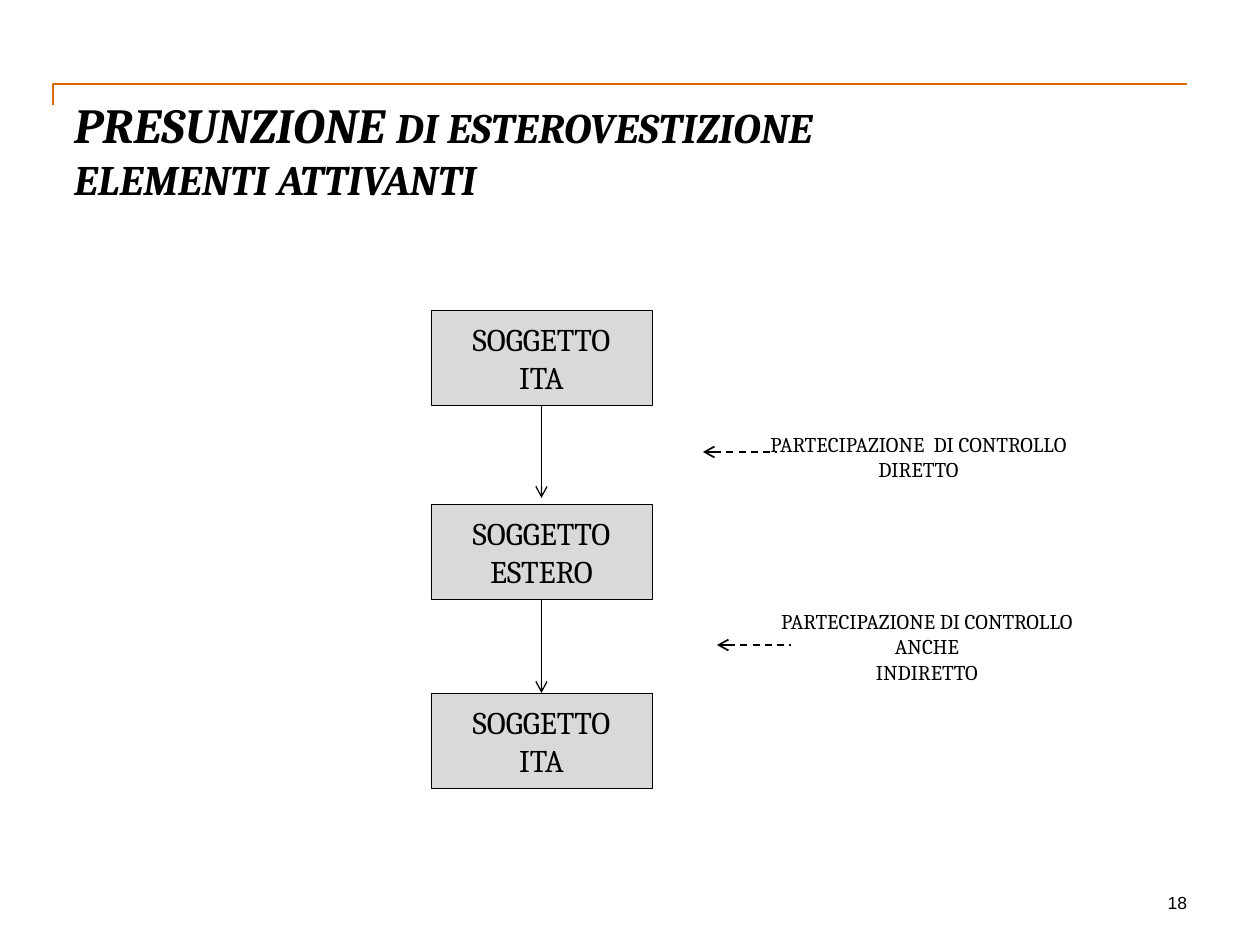
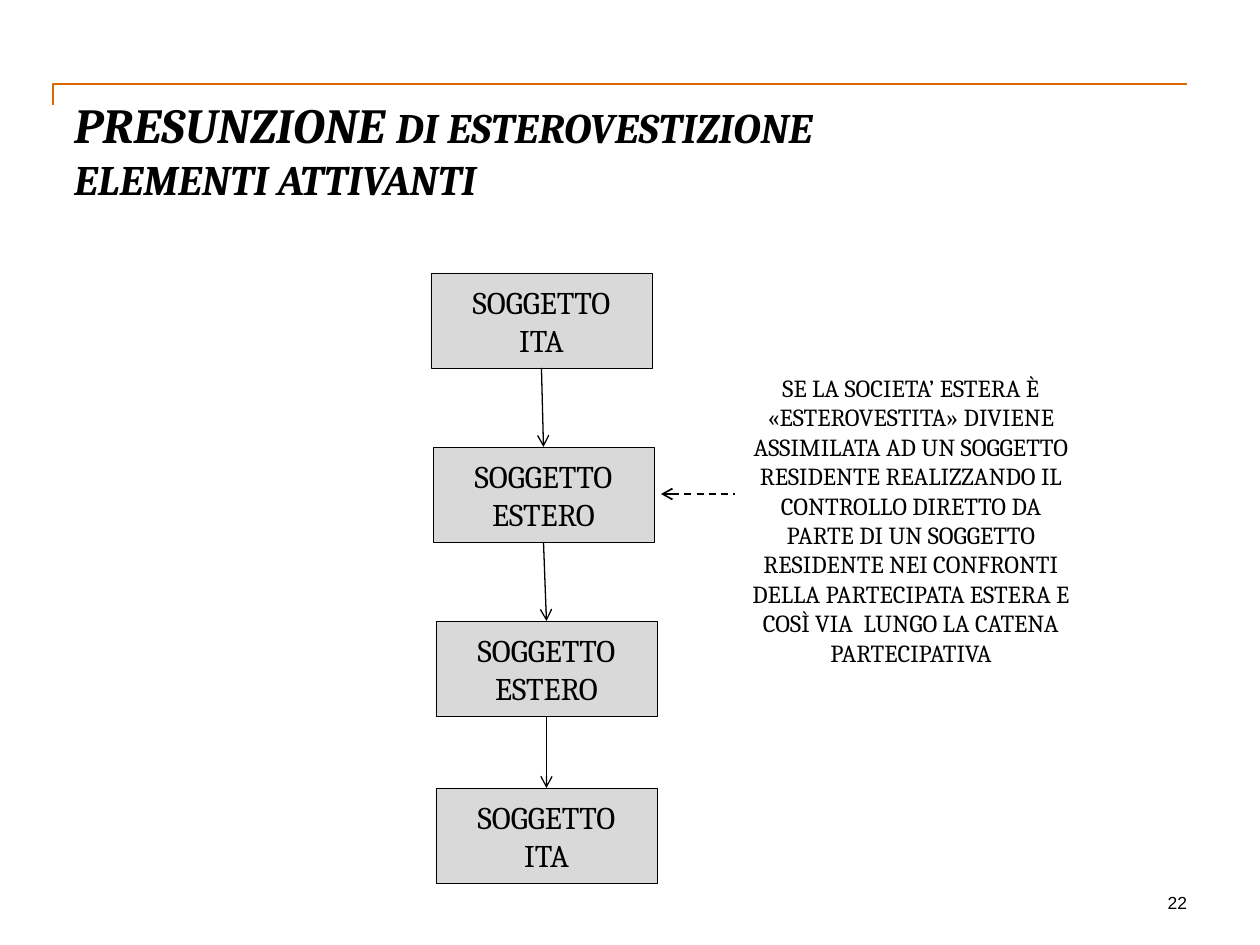
import lxml.etree
import pptx
import pptx.dml.color
import pptx.enum.dml
import pptx.enum.shapes
import pptx.enum.text
import pptx.oxml.ns
import pptx.util

SCALE = 914400 / 126
HUES = {"ink": "000000", "box": "D9D9D9", "rule": "DC6900"}
SERIF, SANS = "Cambria", "Arial"
WIDE, HIGH = 221, 95
ALIGN = pptx.enum.text.PP_ALIGN
ANCHOR = pptx.enum.text.MSO_ANCHOR

FIRST = [(431, 310, "ITA", 6), (431, 504, "ESTERO", 0), (431, 693, "ITA", 0)]
SECOND = [(431, 273, "ITA", 0), (433, 447, "ESTERO", 0),
          (436, 621, "ESTERO", 0), (436, 788, "ITA", 0)]
CLAIM = ("SE LA SOCIETA’ ESTERA È «ESTEROVESTITA» DIVIENE ASSIMILATA AD UN "
         "SOGGETTO RESIDENTE REALIZZANDO IL CONTROLLO DIRETTO DA PARTE DI UN "
         "SOGGETTO RESIDENTE NEI CONFRONTI DELLA PARTECIPATA ESTERA E COSÌ "
         "VIA  LUNGO LA CATENA PARTECIPATIVA")


def px(*sizes):
    """Turn pixels into EMU."""
    return [pptx.util.Emu(round(size * SCALE)) for size in sizes]


def hue(name):
    """Look up a colour by name."""
    return pptx.dml.color.RGBColor.from_string(HUES[name])


def style(font, size, face=SERIF):
    """Set size, face and ink on a font."""
    font.size, font.name = pptx.util.Pt(size), face
    font.color.rgb = hue("ink")


def write(frame, rows, size, align, face=SERIF):
    """Fill a text frame, one paragraph a row."""
    frame.word_wrap = True
    frame.text = "\n".join(rows)
    for para in frame.paragraphs:
        para.alignment = align
        style(para.font, size, face)


def flush(frame):
    """Remove the insets of a text frame."""
    frame.margin_left = frame.margin_right = 0
    frame.margin_top = frame.margin_bottom = 0


def stroke(line, name, width):
    """Give a line its colour and width."""
    line.color.rgb = hue(name)
    line.width = pptx.util.Pt(width)


def note(slide, area, rows, size):
    """Add a centred text block."""
    frame = slide.shapes.add_textbox(*px(*area)).text_frame
    frame.vertical_anchor = ANCHOR.MIDDLE
    write(frame, rows, size, ALIGN.CENTER)


def box(slide, left, top, word):
    """Add one grey party box."""
    kind = pptx.enum.shapes.MSO_SHAPE.RECTANGLE
    shape = slide.shapes.add_shape(kind, *px(left, top, WIDE, HIGH))
    shape.shadow.inherit = False
    shape.fill.solid()
    shape.fill.fore_color.rgb = hue("box")
    stroke(shape.line, "ink", 0.25)
    shape.text_frame.vertical_anchor = ANCHOR.MIDDLE
    write(shape.text_frame, ["SOGGETTO", word], 18, ALIGN.CENTER)
    return shape


def arrow(slide, ends, width, tip, dashed=False):
    """Add a straight line with an open arrowhead at the tip end."""
    kind = pptx.enum.shapes.MSO_CONNECTOR.STRAIGHT
    link = slide.shapes.add_connector(kind, *px(*ends))
    stroke(link.line, "ink", width)
    if dashed:
        link.line.dash_style = pptx.enum.dml.MSO_LINE.DASH
    qn = pptx.oxml.ns.qn
    props = link.element.spPr
    lxml.etree.SubElement(props.find(qn("a:ln")), qn(tip), type="arrow")
    lxml.etree.SubElement(props, qn("a:effectLst"))
    return link


def chain(slide, steps):
    """Stack the boxes and link each to the next."""
    shapes = [box(slide, *step[:3]) for step in steps]
    for i, (start, end) in enumerate(zip(steps, steps[1:])):
        left, top, _, gap = start
        ends = (left + WIDE / 2, top + HIGH, end[0] + WIDE / 2, end[1] - gap)
        link = arrow(slide, ends, 0.75, "a:tailEnd")
        link.begin_connect(shapes[i], 2)
        if not gap:
            link.end_connect(shapes[i + 1], 0)


def hint(slide, left, top):
    """Add a dashed arrow that points left."""
    arrow(slide, (left, top, left + 74, top), 1, "a:headEnd", dashed=True)


def rule(slide):
    """Draw the orange rule with its short corner."""
    build = slide.shapes.build_freeform(53, 105, scale=SCALE)
    build.add_line_segments([(53, 84), (1187, 84)], close=False)
    shape = build.convert_to_shape()
    shape.shadow.inherit = False
    shape.fill.background()
    stroke(shape.line, "rule", 1)


def title(slide):
    """Add the shared two-line title."""
    frame = slide.shapes.add_textbox(*px(74, 95, 1113, 126)).text_frame
    flush(frame)
    write(frame, ["PRESUNZIONE ", "ELEMENTI ATTIVANTI"], 24, ALIGN.LEFT)
    for para in frame.paragraphs:
        para.font.bold = para.font.italic = True
    head = frame.paragraphs[0]
    head.runs[0].font.size = pptx.util.Pt(28)
    head.add_run().text = "DI ESTEROVESTIZIONE"


def page(deck, number):
    """Add a slide with rule, title and page number."""
    slide = deck.slides.add_slide(deck.slide_layouts[6])
    rule(slide)
    title(slide)
    frame = slide.shapes.add_textbox(*px(977, 892, 210, 21)).text_frame
    flush(frame)
    write(frame, [str(number)], 10, ALIGN.RIGHT, SANS)
    return slide


def main():
    """Build and save both slides."""
    deck = pptx.Presentation()
    deck.slide_width, deck.slide_height = px(1260, 945)

    slide = page(deck, 18)
    chain(slide, FIRST)
    note(slide, (735, 388, 367, 137),
         ["PARTECIPAZIONE  DI CONTROLLO", "DIRETTO"], 12)
    note(slide, (751, 599, 352, 95),
         ["PARTECIPAZIONE DI CONTROLLO ANCHE", "INDIRETTO"], 12)
    hint(slide, 703, 452)
    hint(slide, 717, 645)

    slide = page(deck, 22)
    chain(slide, SECOND)
    note(slide, (735, 326, 352, 388), [CLAIM], 14)
    hint(slide, 661, 494)

    deck.save("out.pptx")


if __name__ == "__main__":
    main()
